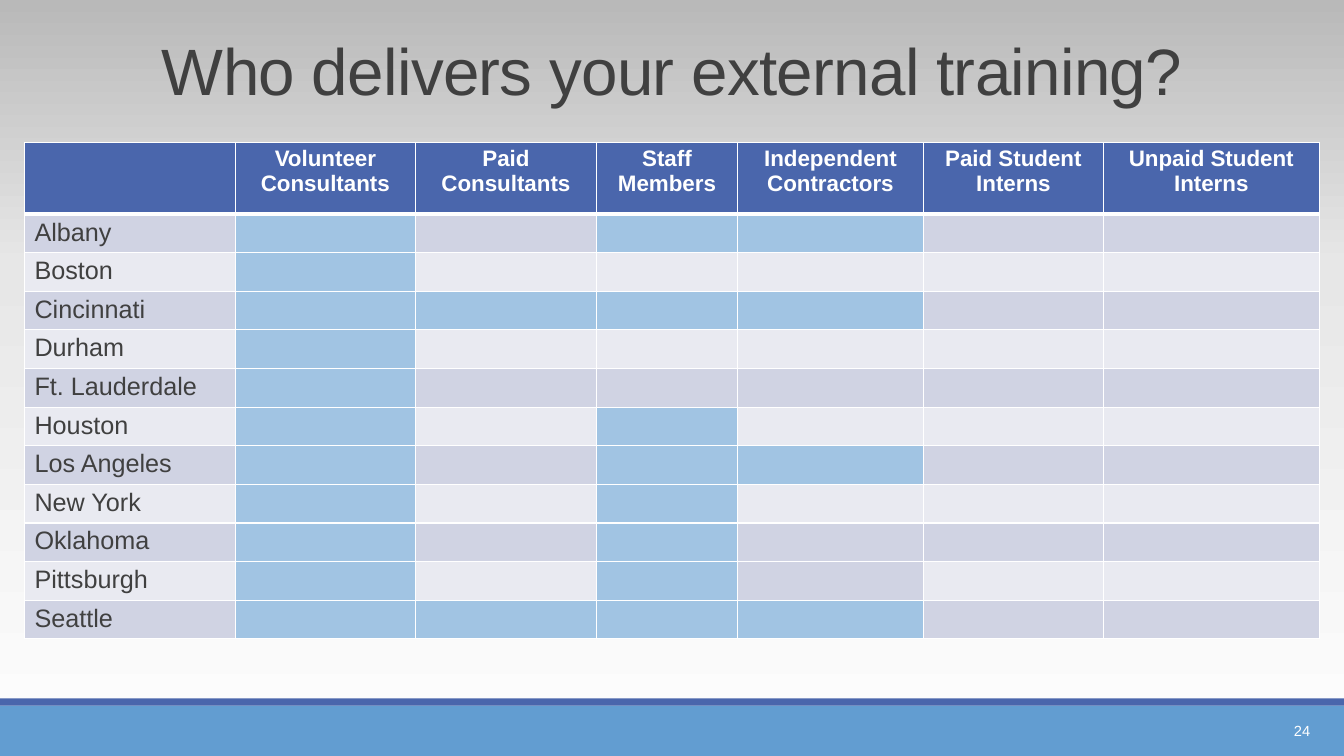
"""Build a slide with a table of who delivers external training in each city."""
import copy
from dataclasses import dataclass

import pptx
import pptx.dml.color
import pptx.enum.shapes
import pptx.enum.text
import pptx.oxml
import pptx.oxml.ns
import pptx.util

Pt = pptx.util.Pt
ALIGN = pptx.enum.text.PP_ALIGN
MIDDLE = pptx.enum.text.MSO_ANCHOR.MIDDLE


@dataclass(frozen=True)
class Theme:
    """Colours, font and type sizes of the slide."""
    font: str = "Arial"
    ink: str = "404040"
    white: str = "FFFFFF"
    navy: str = "4A66AC"
    footer: str = "629DD1"
    marked: str = "A1C4E3"
    odd_row: str = "D0D3E3"
    even_row: str = "E9EAF1"
    backdrop: tuple = ((0, "FEFEFE"), (0.65, "E7E7E7"), (1, "B9B9B9"))
    title_size: float = 46.8
    header_size: float = 16
    city_size: float = 18
    number_size: float = 10.5


THEME = Theme()
SLIDE_WIDTH, SLIDE_HEIGHT = 960, 540
HEADERS = ["", "Volunteer Consultants", "Paid Consultants", "Staff Members",
           "Independent Contractors", "Paid Student Interns", "Unpaid Student Interns"]
COLUMN_WIDTHS = [150.6, 128.8, 129.2, 100.8, 132.8, 128.6, 154.2]
HEADER_HEIGHT, ROW_HEIGHT = 51.4, 27.4
CITY_DELIVERY = {
    "Albany": (1, 3, 4),
    "Boston": (1,),
    "Cincinnati": (1, 2, 3, 4),
    "Durham": (1,),
    "Ft. Lauderdale": (1,),
    "Houston": (1, 3),
    "Los Angeles": (1, 3, 4),
    "New York": (1, 3),
    "Oklahoma": (1, 3),
    "Pittsburgh": (1, 3),
    "Seattle": (1, 2, 3, 4),
}
SHADE_EXCEPTIONS = {("Pittsburgh", 4): THEME.odd_row}


def rgb(value):
    """Return a colour object for a hex value."""
    return pptx.dml.color.RGBColor.from_string(value)


def apply(target, values):
    """Set each attribute in values on the target."""
    for name, value in values.items():
        setattr(target, name, value)


def place(shape, left, top, width, height):
    """Move and size a shape, in points."""
    apply(shape, {"left": Pt(left), "top": Pt(top), "width": Pt(width), "height": Pt(height)})


def write(frame, text, size, colour, align=ALIGN.LEFT, bold=False):
    """Write one formatted paragraph and return it."""
    para = frame.paragraphs[0]
    para.alignment = align
    span = para.add_run()
    span.text = text
    apply(span.font, {"name": THEME.font, "size": Pt(size), "bold": bold})
    span.font.color.rgb = rgb(colour)
    return para


def paint_background(page):
    """Fill the page with a vertical gradient."""
    fill = page.background.fill
    fill.gradient()
    fill.gradient_angle = 90
    stop_list = page.element.find(".//" + pptx.oxml.ns.qn("a:gsLst"))
    stop_list.append(copy.deepcopy(stop_list[0]))
    for stop, (position, colour) in zip(fill.gradient_stops, THEME.backdrop):
        stop.position = position
        stop.color.rgb = rgb(colour)


def add_bar(page, top, height, colour):
    """Add a full-width bar."""
    bar = page.shapes.add_shape(pptx.enum.shapes.MSO_SHAPE.RECTANGLE, 0, Pt(top),
                                Pt(SLIDE_WIDTH), Pt(height))
    bar.shadow.inherit = False
    bar.fill.solid()
    bar.fill.fore_color.rgb = rgb(colour)
    bar.line.fill.background()


def add_title(page, text):
    """Fill and format the title placeholder."""
    title = page.shapes.title
    place(title, 0, 9.4, SLIDE_WIDTH, 88.6)
    apply(title.text_frame, {"vertical_anchor": MIDDLE, "word_wrap": True,
                             "auto_size": pptx.enum.text.MSO_AUTO_SIZE.NONE})
    para = write(title.text_frame, text, THEME.title_size, THEME.ink, ALIGN.CENTER)
    para.line_spacing = 0.85
    para.runs[0].font._element.set("spc", "-50")


def add_page_number(page, text):
    """Add the page number at the lower right."""
    box = page.shapes.add_textbox(Pt(840), Pt(507.6), Pt(103), Pt(28.8))
    apply(box.text_frame, {"vertical_anchor": MIDDLE, "word_wrap": True})
    write(box.text_frame, text, THEME.number_size, THEME.white, ALIGN.RIGHT)


def format_cell(cell, colour, top_line=1, bottom_line=1):
    """Give a cell its margins, white borders and fill."""
    apply(cell, {"margin_top": Pt(3), "margin_bottom": Pt(3)})
    properties = cell._tc.get_or_add_tcPr()
    for side, width in {"L": 1, "R": 1, "T": top_line, "B": bottom_line}.items():
        properties.append(pptx.oxml.parse_xml(
            f'<a:ln{side} {pptx.oxml.ns.nsdecls("a")} w="{Pt(width)}"><a:solidFill>'
            f'<a:srgbClr val="{THEME.white}"/></a:solidFill></a:ln{side}>'))
    cell.fill.solid()
    cell.fill.fore_color.rgb = rgb(colour)


def add_delivery_table(page):
    """Add the table of cities and the people who train there."""
    row_count = len(CITY_DELIVERY) + 1
    height = HEADER_HEIGHT + ROW_HEIGHT * len(CITY_DELIVERY)
    table = page.shapes.add_table(row_count, len(HEADERS), Pt(17.5), Pt(101.5),
                                  Pt(sum(COLUMN_WIDTHS)), Pt(height)).table
    for column, width in zip(table.columns, COLUMN_WIDTHS):
        column.width = Pt(width)
    for index, row in enumerate(table.rows):
        row.height = Pt(ROW_HEIGHT if index else HEADER_HEIGHT)
    for column, header in enumerate(HEADERS):
        cell = table.cell(0, column)
        format_cell(cell, THEME.navy, bottom_line=3)
        if header:
            write(cell.text_frame, header, THEME.header_size, THEME.white, ALIGN.CENTER, True)
    for row, (city, marked) in enumerate(CITY_DELIVERY.items(), 1):
        band = THEME.odd_row if row % 2 else THEME.even_row
        for column in range(len(HEADERS)):
            shade = THEME.marked if column in marked else SHADE_EXCEPTIONS.get((city, column), band)
            format_cell(table.cell(row, column), shade, top_line=3 if row == 1 else 1)
        write(table.cell(row, 0).text_frame, city, THEME.city_size, THEME.ink)


def main():
    """Build and save the deck."""
    deck = pptx.Presentation()
    apply(deck, {"slide_width": Pt(SLIDE_WIDTH), "slide_height": Pt(SLIDE_HEIGHT)})
    page = deck.slides.add_slide(deck.slide_layouts[5])
    paint_background(page)
    add_bar(page, 504, 36, THEME.footer)
    add_bar(page, 498.8, 5.2, THEME.navy)
    add_page_number(page, "24")
    add_title(page, "Who delivers your external training?")
    add_delivery_table(page)
    deck.save("out.pptx")


if __name__ == "__main__":
    main()
